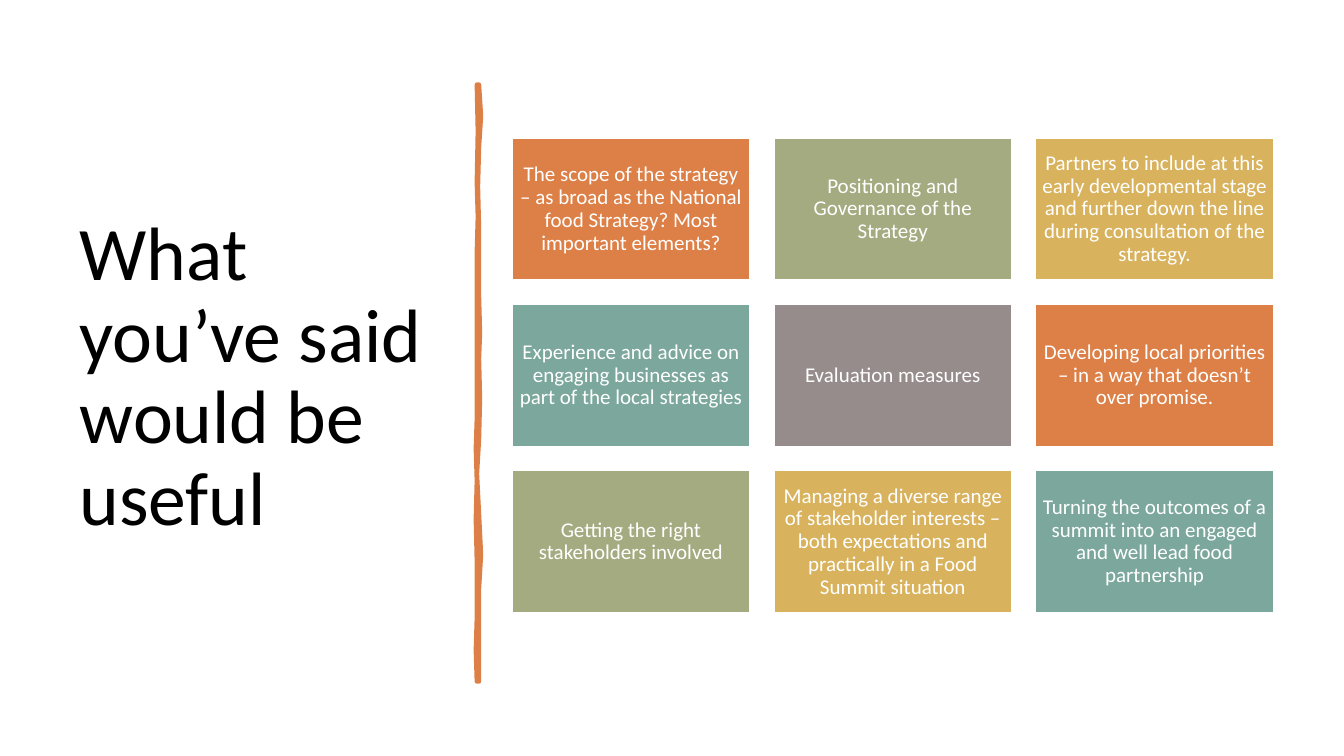
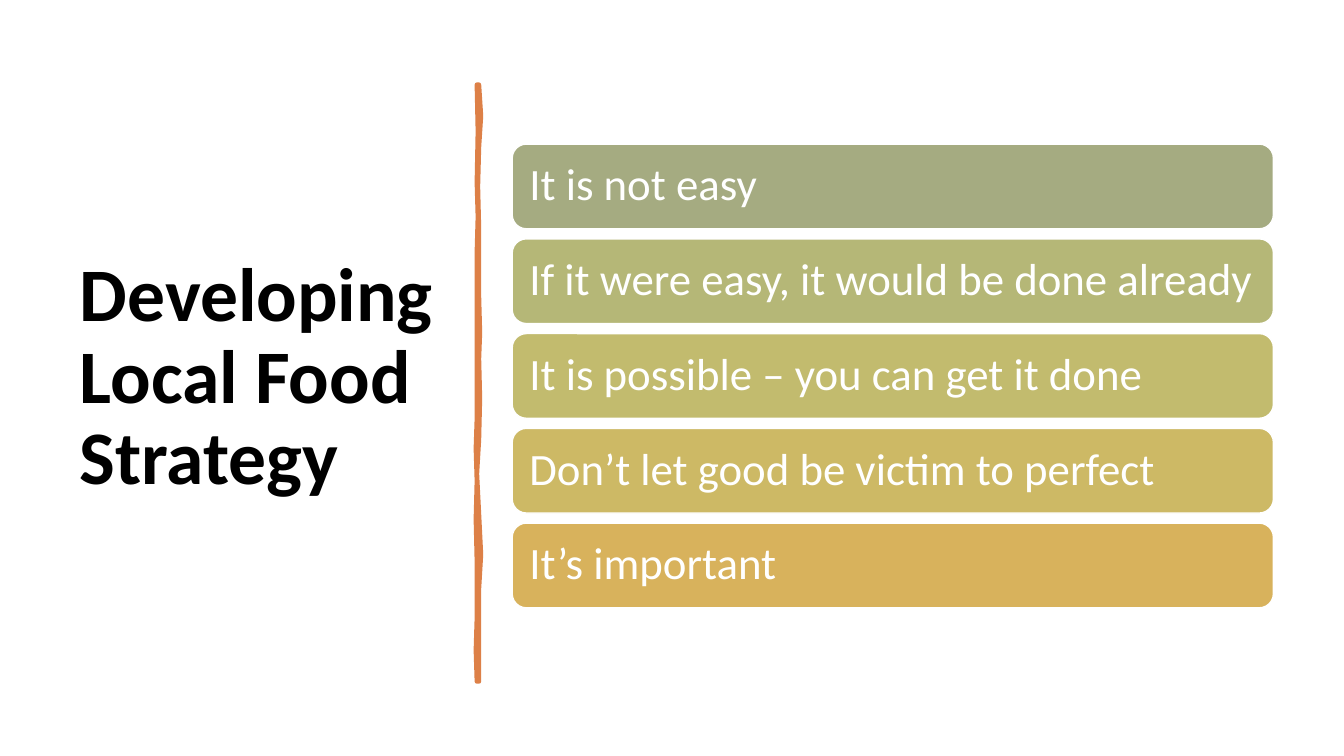
"""Build two food strategy slides: a grid of nine cards and a stack of five bars."""
from pptx import Presentation
from pptx.dml.color import RGBColor as RGB
from pptx.enum.shapes import MSO_SHAPE as SHAPE
from pptx.enum.text import MSO_ANCHOR as ANCHOR, MSO_AUTO_SIZE as AUTO, PP_ALIGN as ALIGN
from pptx.oxml.ns import qn
from pptx.util import Inches, Pt

COLORS = {
    "black": "000000", "white": "FFFFFF", "orange": "DD8047", "sage": "A5AB81",
    "gold": "D8B25C", "teal": "7BA79D", "taupe": "968C8C",
    "moss": "B5B777", "olive": "C2BB6E", "straw": "CDB965",
}
LEFT, WIDTH = 5.08, 7.55
RULE = [
    (475, 84), (477, 115), (475, 146), (474, 185), (475, 226), (475, 294), (476, 330),
    (475, 356), (476, 395), (475, 436), (473, 470), (475, 510), (477, 550), (475, 584),
    (475, 676), (473, 676), (472, 645), (473, 613), (473, 557), (472, 515), (473, 477),
    (472, 445), (473, 415), (473, 250), (474, 215), (473, 181), (474, 130), (473, 84),
]
CARDS = [
    ("orange", "The scope of the strategy – as broad as the National food Strategy? Most important elements?"),
    ("sage", "Positioning and Governance of the Strategy"),
    ("gold", "Partners to include at this early developmental stage and further down the line during consultation of the strategy."),
    ("teal", "Experience and advice on engaging businesses as part of the local strategies"),
    ("taupe", "Evaluation measures"),
    ("orange", "Developing local priorities – in a way that doesn’t over promise."),
    ("sage", "Getting the right stakeholders involved"),
    ("gold", "Managing a diverse range of stakeholder interests – both expectations and practically in a Food Summit situation"),
    ("teal", "Turning the outcomes of a summit into an engaged and well lead food partnership"),
]
BARS = [
    ("sage", "It is not easy"),
    ("moss", "If it were easy, it would be done already"),
    ("olive", "It is possible – you can get it done"),
    ("straw", "Don’t let good be victim to perfect"),
    ("gold", "It’s important"),
]
PANELS = [
    {"title": "What you’ve said would be useful", "bold": False, "items": CARDS,
     "shape": SHAPE.RECTANGLE, "cols": 3, "top": 1.37, "height": 1.41, "gap": 0.24,
     "size": 15, "align": ALIGN.CENTER, "inset": 0.06},
    {"title": "Developing Local Food Strategy", "bold": True, "items": BARS,
     "shape": SHAPE.ROUNDED_RECTANGLE, "cols": 1, "top": 1.43, "height": 0.84, "gap": 0.1,
     "size": 32, "align": ALIGN.LEFT, "inset": 0.13},
]


def write(sp, text, size, color, align, inset, bold=False):
    tf = sp.text_frame
    tf.text = text
    frame = {"word_wrap": True, "auto_size": AUTO.NONE, "vertical_anchor": ANCHOR.MIDDLE}
    for side in ("left", "right", "top", "bottom"):
        frame[f"margin_{side}"] = Inches(inset)
    p = tf.paragraphs[0]
    font = p.runs[0].font
    formats = (
        (tf, frame),
        (p, {"alignment": align, "line_spacing": 0.9}),
        (font, {"name": "Calibri", "size": Pt(size), "bold": bold}),
    )
    for target, values in formats:
        for name, value in values.items():
            setattr(target, name, value)
    font.color.rgb = RGB.from_string(COLORS[color])


def paint(sp, fill, line, width):
    sp.shadow.inherit = False
    sp.fill.solid()
    sp.fill.fore_color.rgb = RGB.from_string(COLORS[fill])
    sp.line.color.rgb = RGB.from_string(COLORS[line])
    sp.line.width = Pt(width)


prs = Presentation()
prs.slide_width, prs.slide_height = Inches(13.33), Inches(7.5)

for panel in PANELS:
    slide = prs.slides.add_slide(prs.slide_layouts[5])
    title = slide.shapes.title
    box = {"left": 0.69, "top": 0.7, "width": 3.74, "height": 6.11}
    for name, value in box.items():
        setattr(title, name, Inches(value))
    write(title, panel["title"], 54, "black", ALIGN.LEFT, 0.1, panel["bold"])

    builder = slide.shapes.build_freeform(*RULE[0], scale=Inches(0.01))
    builder.add_line_segments(RULE[1:], close=True)
    rule = builder.convert_to_shape()
    paint(rule, "orange", "orange", 3.25)
    ln = rule.element.spPr.find(qn("a:ln"))
    ln.append(ln.makeelement(qn("a:round"), {}))

    cols, gap, height = panel["cols"], panel["gap"], panel["height"]
    width = (WIDTH - (cols - 1) * gap) / cols
    for i, (color, text) in enumerate(panel["items"]):
        row, col = divmod(i, cols)
        x = LEFT + col * (width + gap)
        y = panel["top"] + row * (height + gap)
        sp = slide.shapes.add_shape(panel["shape"], *map(Inches, (x, y, width, height)))
        paint(sp, color, "white", 1)
        write(sp, text, panel["size"], "white", panel["align"], panel["inset"])

prs.save("out.pptx")
